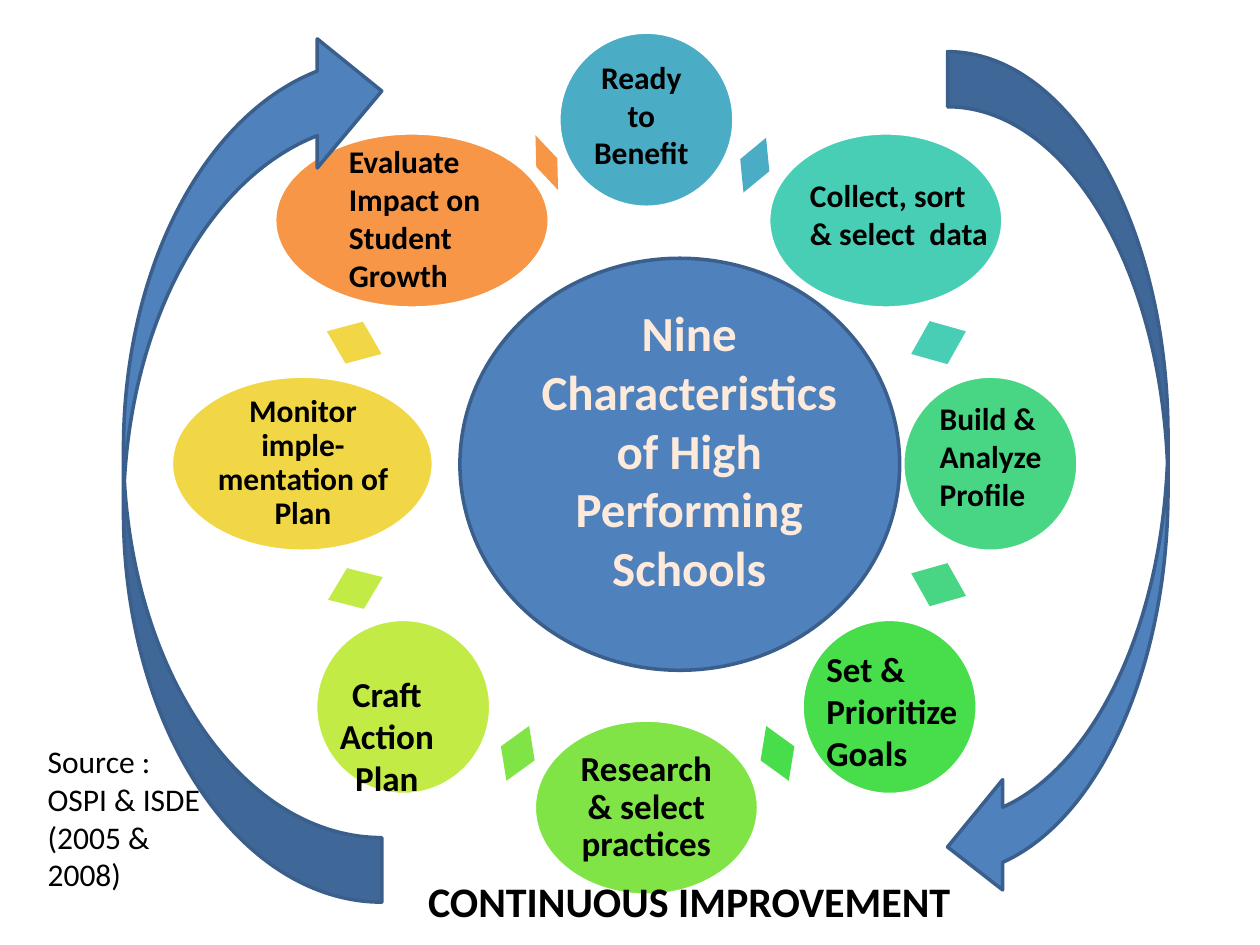
"""Build a slide showing a continuous improvement wheel around nine school characteristics."""
import math
from dataclasses import dataclass

import pptx
import pptx.dml.color
import pptx.enum.shapes
import pptx.enum.text
import pptx.util
from pptx.util import Inches

SHAPE = pptx.enum.shapes.MSO_SHAPE
ALIGN = pptx.enum.text.PP_ALIGN
ANCHOR = pptx.enum.text.MSO_ANCHOR

CENTER_X, CENTER_Y = 5.13, 3.68
STAGE_RADIUS, LINK_RADIUS = 2.73, 2.51
STAGE_HEIGHT, LINK_HEIGHT = 1.39, 0.47
BLUE, BLUE_EDGE, WHITE, BLACK = "4F81BD", "3A5F8C", "FFFFFF", "000000"


@dataclass
class Box:
    left: float
    top: float
    width: float
    height: float

    def lengths(self) -> tuple:
        return tuple(Inches(v) for v in (self.left, self.top, self.width, self.height))


@dataclass
class Stage:
    color: str
    width: float
    link_width: float
    shift: float = 0
    link_shift: tuple = (0, 0)


@dataclass
class Label:
    text: str
    box: Box
    size: float = 18
    bold: bool = True
    align: ALIGN = ALIGN.LEFT
    color: str = BLACK
    anchor: ANCHOR = ANCHOR.TOP
    inset: float = 0
    spacing: float = 1.0


STAGES = [
    Stage("4BACC6", 1.39, 0.25, 0, (-0.1, -0.05)),
    Stage("49CEB6", 1.86, 0.37, -0.03),
    Stage("48D684", 1.39, 0.37),
    Stage("47DD4B", 1.39, 0.29, 0, (0.08, -0.02)),
    Stage("80E446", 1.78, 0.29, 0, (-0.06, -0.02)),
    Stage("C3EB46", 1.39, 0.35, 0, (0.01, 0.03)),
    Stage("F1D746", 2.08, 0.36),
    Stage("F79646", 2.18, 0.18, 0.07, (0.17, -0.07)),
]

TITLE = Label("Nine Characteristics of High Performing Schools", Box(4.19, 2.35, 2.56, 2.46),
              28, align=ALIGN.CENTER, color="FDEADA")

LABELS = [
    Label("Ready to Benefit", Box(4.58, 0.41, 1.02, 1.01), align=ALIGN.CENTER),
    Label("Collect, sort & select  data", Box(6.33, 1.35, 1.61, 1.01)),
    Label("Build & Analyze Profile", Box(7.36, 3.12, 1.4, 1.31)),
    Label("Set & Prioritize Goals", Box(6.46, 5.09, 1.38, 1.11), 20),
    Label("Research & select practices", Box(4.5, 5.92, 1.26, 0.98), 20, align=ALIGN.CENTER,
          anchor=ANCHOR.MIDDLE, inset=0.03, spacing=0.9),
    Label("Craft Action Plan", Box(2.48, 5.29, 1.18, 1.11), 20, align=ALIGN.CENTER),
    Label("Monitor imple-mentation of Plan", Box(1.67, 3.19, 1.47, 0.98), align=ALIGN.CENTER,
          anchor=ANCHOR.MIDDLE, inset=0.03, spacing=0.9),
    Label("Evaluate Impact on Student Growth", Box(2.67, 1.08, 1.42, 1.31)),
    Label("CONTINUOUS IMPROVEMENT", Box(2.18, 6.9, 6.58, 0.5), 24, align=ALIGN.CENTER),
    Label("Source : OSPI & ISDE (2005 & 2008)", Box(0.28, 5.84, 1.42, 1.31), bold=False),
]


def rgb(color: str) -> pptx.dml.color.RGBColor:
    return pptx.dml.color.RGBColor.from_string(color)


def apply(target, values: dict) -> None:
    for name, value in values.items():
        setattr(target, name, value)


def draw_shape(slide, kind: SHAPE, box: Box, fill: str, edge: str = "", rotation: float = 0) -> None:
    shape = slide.shapes.add_shape(kind, *box.lengths())
    shape.shadow.inherit = False
    shape.rotation = rotation
    shape.fill.solid()
    shape.fill.fore_color.rgb = rgb(fill)
    if edge:
        shape.line.color.rgb = rgb(edge)
        shape.line.width = pptx.util.Pt(2)
    else:
        shape.line.fill.background()


def place_on_ring(angle: float, radius: float, width: float, height: float,
                  shift_x: float = 0, shift_y: float = 0) -> Box:
    x = CENTER_X + radius * math.sin(math.radians(angle)) + shift_x
    y = CENTER_Y - radius * math.cos(math.radians(angle)) + shift_y
    return Box(x - width / 2, y - height / 2, width, height)


def draw_stage(slide, stage: Stage, angle: float, step: float) -> None:
    ellipse = place_on_ring(angle, STAGE_RADIUS, stage.width, STAGE_HEIGHT, stage.shift)
    draw_shape(slide, SHAPE.OVAL, ellipse, stage.color, WHITE)
    link_angle = angle + step / 2
    link = place_on_ring(link_angle, LINK_RADIUS, stage.link_width, LINK_HEIGHT, *stage.link_shift)
    draw_shape(slide, SHAPE.LEFT_RIGHT_ARROW, link, stage.color, rotation=link_angle)


def write_label(shape, label: Label) -> None:
    apply(shape, dict(zip(("left", "top", "width", "height"), label.box.lengths())))
    frame = shape.text_frame
    apply(frame, {"word_wrap": True, "vertical_anchor": label.anchor,
                  "auto_size": pptx.enum.text.MSO_AUTO_SIZE.NONE})
    if label.inset:
        sides = ("margin_left", "margin_top", "margin_right", "margin_bottom")
        apply(frame, dict.fromkeys(sides, Inches(label.inset)))
    paragraph = frame.paragraphs[0]
    apply(paragraph, {"alignment": label.align, "line_spacing": label.spacing})
    run = paragraph.add_run()
    run.text = label.text
    apply(run.font, {"name": "Calibri", "size": pptx.util.Pt(label.size), "bold": label.bold})
    run.font.color.rgb = rgb(label.color)


def main() -> None:
    presentation = pptx.Presentation()
    apply(presentation, {"slide_width": Inches(10), "slide_height": Inches(7.5)})
    slide = presentation.slides.add_slide(presentation.slide_layouts[5])

    step = 360 / len(STAGES)
    for index, stage in enumerate(STAGES):
        draw_stage(slide, stage, index * step, step)
    draw_shape(slide, SHAPE.OVAL, Box(3.65, 2.05, 3.49, 3.27), BLUE, BLUE_EDGE)
    draw_shape(slide, SHAPE.CURVED_LEFT_ARROW, Box(0.98, 0.21, 2.05, 6.95), BLUE, BLUE_EDGE, 180)
    draw_shape(slide, SHAPE.CURVED_LEFT_ARROW, Box(7.52, 0.41, 1.75, 6.75), BLUE, BLUE_EDGE)

    title = slide.shapes.title
    title.element.getparent().append(title.element)
    write_label(title, TITLE)
    for label in LABELS:
        write_label(slide.shapes.add_textbox(*label.box.lengths()), label)

    presentation.save("out.pptx")


if __name__ == "__main__":
    main()
